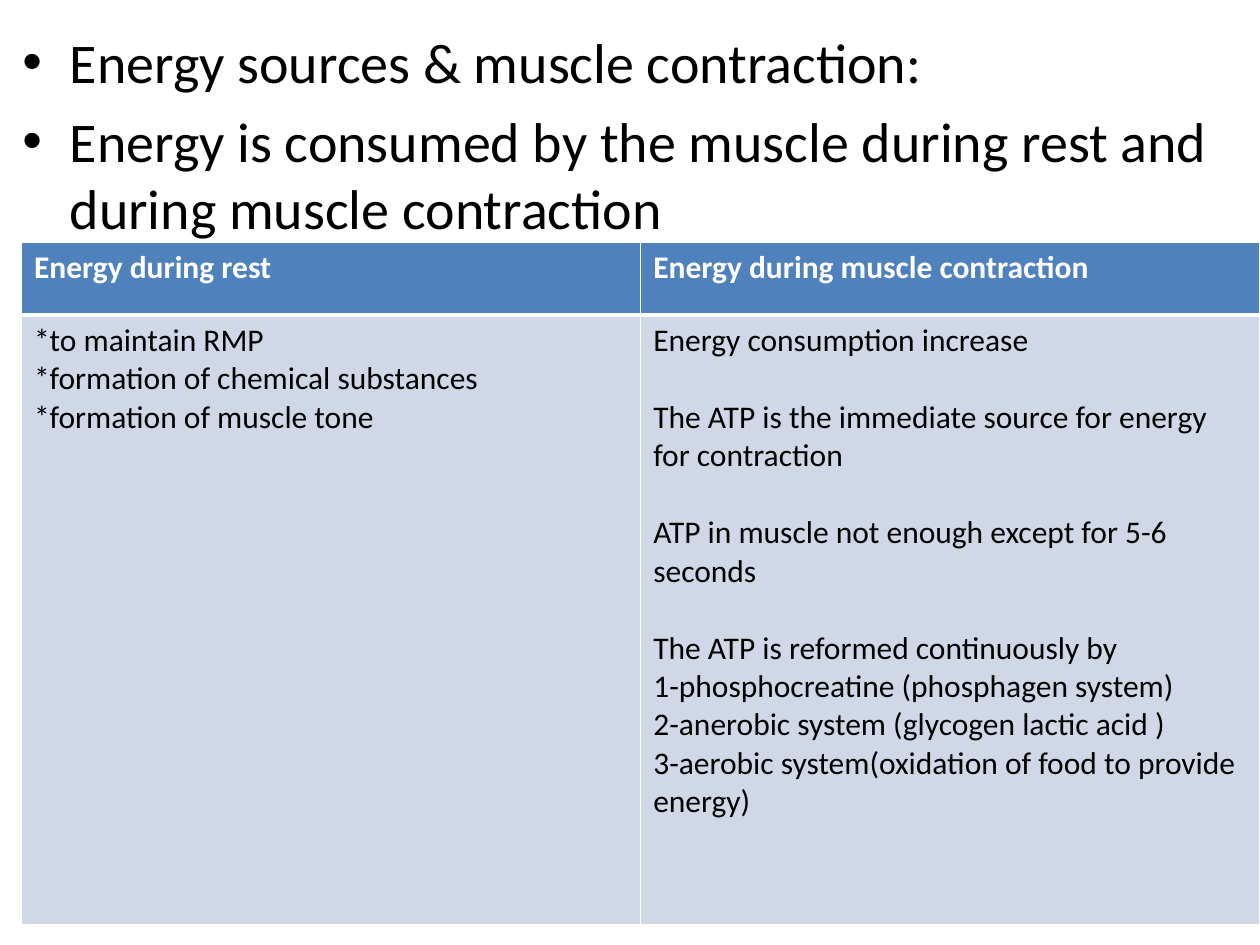
from lxml.etree import SubElement
from pptx import Presentation
from pptx.dml.color import RGBColor
from pptx.oxml.ns import qn
from pptx.util import Inches, Pt

FONT = "Calibri"
WHITE, BLACK = "FFFFFF", "000000"
HEADER_FORMAT = {"size": Pt(18), "bold": True}
BODY_FORMAT = {"size": Pt(18), "bold": False}
BULLET_FORMAT = {"size": Pt(32)}
GAP = Pt(22)

BULLETS = [
    "Energy sources & muscle contraction:",
    "Energy is consumed by the muscle during rest and during muscle contraction",
]
HEADINGS = ["Energy during rest", "Energy during muscle contraction"]
# Each column holds groups of lines; a one-line gap parts the groups.
COLUMNS = [
    [["*to maintain RMP",
      "*formation of chemical substances",
      "*formation of muscle tone"]],
    [["Energy consumption increase"],
     ["The ATP is the immediate source for energy for contraction"],
     ["ATP in muscle not enough except for 5-6 seconds"],
     ["The ATP is reformed continuously by",
      "1-phosphocreatine (phosphagen system)",
      "2-anerobic system (glycogen lactic acid )",
      "3-aerobic system(oxidation of food to provide energy)"]],
]


def rgb(hex_color):
    return RGBColor.from_string(hex_color)


def write_lines(frame, lines, color, font_format):
    """Write one paragraph per line and return the paragraphs."""
    paragraphs = []
    for index, line in enumerate(lines):
        paragraph = frame.add_paragraph() if index else frame.paragraphs[0]
        run = paragraph.add_run()
        run.text = line
        run.font.name = FONT
        run.font.color.rgb = rgb(color)
        for key, value in font_format.items():
            setattr(run.font, key, value)
        paragraphs.append(paragraph)
    return paragraphs


def add_bullets(slide, left, top, width, height):
    frame = slide.shapes.add_textbox(left, top, width, height).text_frame
    frame.word_wrap = True
    for paragraph in write_lines(frame, BULLETS, BLACK, BULLET_FORMAT):
        paragraph.space_before = Pt(6.4)
        properties = paragraph._p.get_or_add_pPr()
        indent = Inches(0.375)
        properties.set("marL", str(indent))
        properties.set("indent", str(-indent))
        SubElement(properties, qn("a:buFont"), typeface="Arial")
        SubElement(properties, qn("a:buChar"), char="•")


def style_cell(cell, fill, bottom_width):
    properties = cell._tc.get_or_add_tcPr()
    widths = {"lnL": 1, "lnR": 1, "lnT": 1, "lnB": bottom_width}
    for side, width in widths.items():
        border = SubElement(properties, qn(f"a:{side}"), w=str(Pt(width)))
        solid = SubElement(border, qn("a:solidFill"))
        SubElement(solid, qn("a:srgbClr"), val=WHITE)
    cell.fill.solid()
    cell.fill.fore_color.rgb = rgb(fill)


def add_energy_table(slide, left, top, width, height):
    table = slide.shapes.add_table(2, 2, left, top, width, height).table
    header_height = Inches(0.58)
    table.rows[0].height = header_height
    table.rows[1].height = height - header_height
    for column, (heading, groups) in enumerate(zip(HEADINGS, COLUMNS)):
        table.columns[column].width = width // 2
        header, body = table.cell(0, column), table.cell(1, column)
        style_cell(header, "4F81BD", 3)
        write_lines(header.text_frame, [heading], WHITE, HEADER_FORMAT)

        style_cell(body, "D0D8E8", 1)
        # The thick rule under the header is shared by both rows.
        body._tc.tcPr.find(qn("a:lnT")).set("w", str(Pt(3)))
        lines = [line for group in groups for line in group]
        paragraphs = write_lines(body.text_frame, lines, BLACK, BODY_FORMAT)
        start = 0
        for group in groups[:-1]:
            start += len(group)
            paragraphs[start].space_before = GAP


def main():
    deck = Presentation()
    deck.slide_width, deck.slide_height = Inches(10), Inches(7.5)
    slide = deck.slides.add_slide(deck.slide_layouts[6])
    add_bullets(slide, Inches(0.08), Inches(0.17), Inches(9.83), Inches(7.17))
    add_energy_table(slide, Inches(0.17), Inches(1.92), Inches(9.83), Inches(5.42))
    deck.save("out.pptx")


if __name__ == "__main__":
    main()
